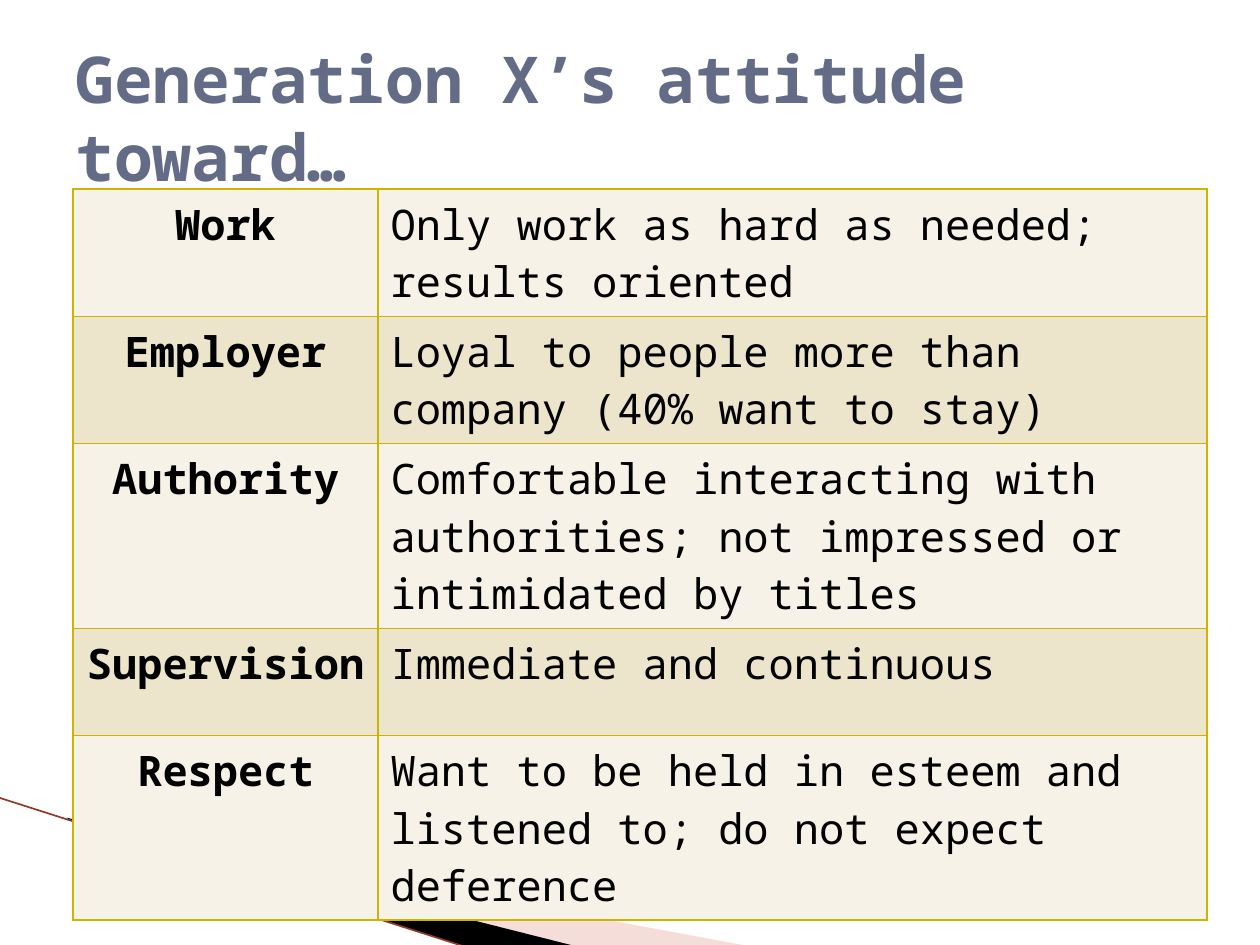
from typing import NamedTuple

from lxml import etree
from pptx import Presentation
from pptx.dml.color import RGBColor
from pptx.enum.shapes import MSO_CONNECTOR
from pptx.enum.text import MSO_ANCHOR, PP_ALIGN
from pptx.oxml.ns import qn
from pptx.util import Inches, Pt

CENTER, LEFT = PP_ALIGN.CENTER, PP_ALIGN.LEFT
MIDDLE = MSO_ANCHOR.MIDDLE
STRAIGHT = MSO_CONNECTOR.STRAIGHT

FONT = "Noto Sans Mono"
BLACK = RGBColor(0, 0, 0)
SLATE = RGBColor(0x64, 0x6B, 0x86)
PINK = RGBColor(0xE7, 0xAC, 0xA4)
RUST = RGBColor(0x8F, 0x3A, 0x2C)
GOLD = RGBColor(0xCC, 0xB4, 0x00)
BANDS = (RGBColor(0xF6, 0xF2, 0xE7), RGBColor(0xEC, 0xE5, 0xCC))


class Wedge(NamedTuple):
    points: list[tuple[float, float]]
    color: RGBColor
    alpha: int = 100


class Trait(NamedTuple):
    topic: str
    view: str
    height: float = 0.85


WEDGES = [
    Wedge([(0.55, 6.51), (5.95, 7.51), (4.56, 7.51), (0.55, 6.5)], PINK, 40),
    Wedge([(0.53, 6.49), (4.57, 7.51), (3.72, 7.52), (0.54, 6.5)], BLACK),
]
TRAITS = [
    Trait("Work", "Only work as hard as needed; results oriented"),
    Trait("Employer", "Loyal to people more than company (40% want to stay)"),
    Trait("Authority", "Comfortable interacting with authorities; "
          "not impressed or intimidated by titles", 1.17),
    Trait("Supervision", "Immediate and continuous"),
    Trait("Respect", "Want to be held in esteem and listened to; "
          "do not expect deference"),
]
WIDTHS = (2.42, 6.58)


def style(para, size: float, color: RGBColor, bold: bool) -> None:
    font = para.font
    font.name, font.size, font.bold = FONT, Pt(size), bold
    font.color.rgb = color


def add_wedge(slide, wedge: Wedge) -> None:
    start, *rest = [(Inches(x), Inches(y)) for x, y in wedge.points]
    pen = slide.shapes.build_freeform(*start)
    pen.add_line_segments(rest, close=True)
    shape = pen.convert_to_shape()
    shape.shadow.inherit = False
    shape.line.fill.background()
    shape.fill.solid()
    shape.fill.fore_color.rgb = wedge.color
    if wedge.alpha < 100:
        tint = shape.fill._xPr.find(qn("a:solidFill"))[0]
        etree.SubElement(tint, qn("a:alpha"), val=str(wedge.alpha * 1000))


def add_edge(slide) -> None:
    edge = slide.shapes.add_connector(
        STRAIGHT, Inches(-0.01), Inches(6.33), Inches(3.71), Inches(7.52))
    edge.line.color.rgb = RUST
    edge.line.width = Pt(0.95)
    etree.SubElement(edge._element.spPr, qn("a:effectLst"))


def add_borders(cell) -> None:
    props = cell._tc.get_or_add_tcPr()
    for side in ("lnL", "lnR", "lnT", "lnB"):
        line = etree.SubElement(props, qn(f"a:{side}"), w=str(Pt(1)))
        fill = etree.SubElement(line, qn("a:solidFill"))
        etree.SubElement(fill, qn("a:srgbClr"), val=str(GOLD))


def fill_cell(cell, text: str, band: RGBColor, head: bool) -> None:
    add_borders(cell)
    cell.fill.solid()
    cell.fill.fore_color.rgb = band
    cell.text = text
    para = cell.text_frame.paragraphs[0]
    para.alignment = CENTER if head else LEFT
    style(para, 24, BLACK, head)


def add_traits(slide) -> None:
    total = sum(trait.height for trait in TRAITS)
    table = slide.shapes.add_table(
        len(TRAITS), len(WIDTHS), Inches(0.58), Inches(1.5),
        Inches(sum(WIDTHS)), Inches(total)).table
    table.first_row = table.horz_banding = False
    for col, width in zip(table.columns, WIDTHS):
        col.width = Inches(width)
    for i, trait in enumerate(TRAITS):
        table.rows[i].height = Inches(trait.height)
        band = BANDS[i % 2]
        fill_cell(table.cell(i, 0), trait.topic, band, True)
        fill_cell(table.cell(i, 1), trait.view, band, False)


def add_title(slide) -> None:
    frame = slide.shapes.add_textbox(
        Inches(0.5), Inches(0.3), Inches(9), Inches(1.25)).text_frame
    frame.word_wrap = True
    frame.vertical_anchor = MIDDLE
    frame.text = "Generation X’s attitude toward…"
    style(frame.paragraphs[0], 36.9, SLATE, True)


def main() -> None:
    deck = Presentation()
    deck.slide_width, deck.slide_height = Inches(10), Inches(7.5)
    slide = deck.slides.add_slide(deck.slide_layouts[6])
    for wedge in WEDGES:
        add_wedge(slide, wedge)
    add_edge(slide)
    add_traits(slide)
    add_title(slide)
    deck.save("out.pptx")


if __name__ == "__main__":
    main()
